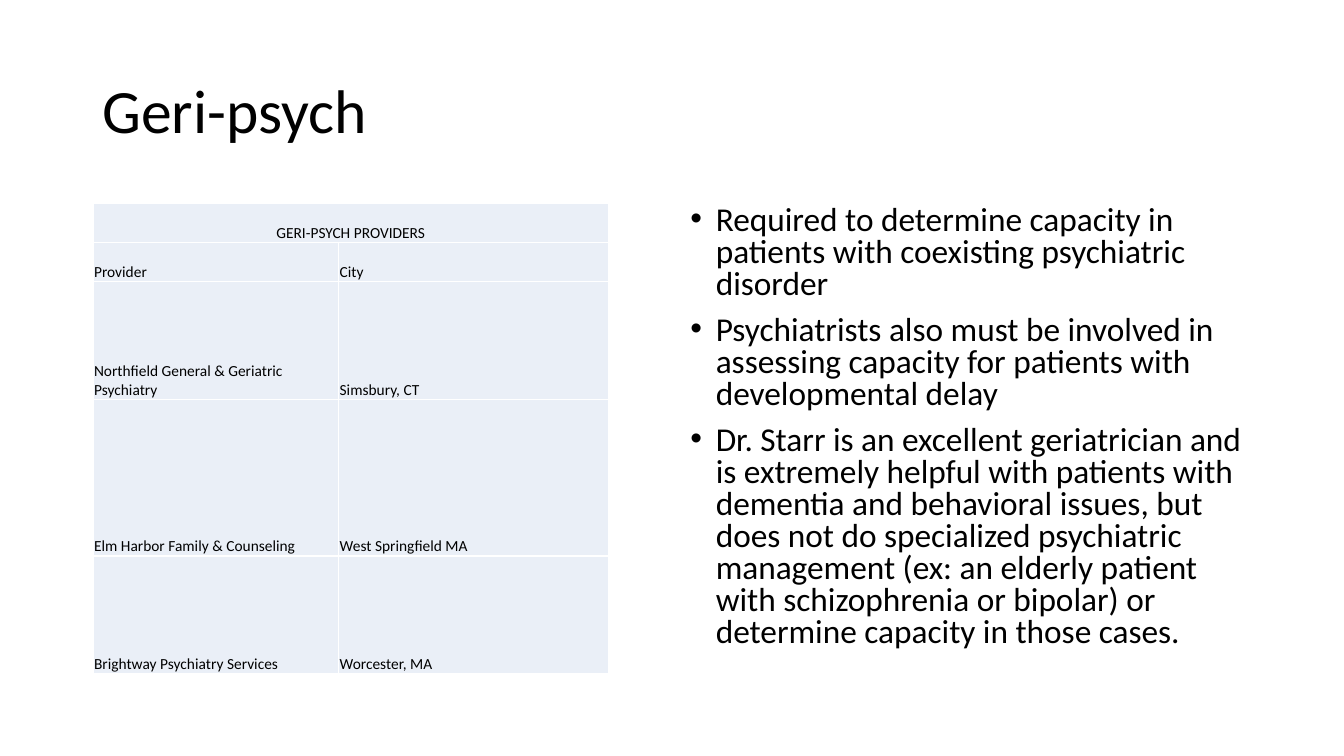
from lxml.etree import SubElement as Sub, Element
from pptx import Presentation
from pptx.dml.color import RGBColor
from pptx.enum.text import MSO_ANCHOR as Anchor, PP_ALIGN as Align
from pptx.oxml.ns import qn
from pptx.util import Cm, Pt

BLACK = RGBColor(0, 0, 0)
WHITE = RGBColor(0xFF, 0xFF, 0xFF)
PALE = RGBColor(0xEA, 0xEF, 0xF7)


def style(para, size):
    for run in para.runs:
        run.font.name = "Calibri"
        run.font.size = Pt(size)
        run.font.color.rgb = BLACK


def edge(cell):
    props = cell._tc.get_or_add_tcPr()
    for i, side in enumerate(("lnL", "lnR", "lnT", "lnB")):
        line = Element(qn("a:" + side), w=str(Pt(1)))
        fill = Sub(line, qn("a:solidFill"))
        Sub(fill, qn("a:srgbClr"), val=str(WHITE))
        props.insert(i, line)


deck = Presentation()
deck.slide_width = Cm(33.87)
deck.slide_height = Cm(19.05)
slide = deck.slides.add_slide(deck.slide_layouts[6])

title = slide.shapes.add_textbox(Cm(2.33), Cm(1.01), Cm(29.21), Cm(3.68)).text_frame
title.word_wrap = True
title.vertical_anchor = Anchor.MIDDLE
title.text = "Geri-psych"
title.paragraphs[0].line_spacing = 0.9
style(title.paragraphs[0], 44)

rows = [
    ("GERI-PSYCH PROVIDERS", ""),
    ("Provider", "City"),
    ("Northfield General & Geriatric Psychiatry", "Simsbury, CT"),
    ("Elm Harbor Family & Counseling", "West Springfield MA"),
    ("Brightway Psychiatry Services", "Worcester, MA"),
]
highs = [0.99, 0.99, 2.96, 3.95, 2.96]
wides = [6.19, 6.79]
grid = slide.shapes.add_table(
    len(rows), 2, Cm(2.35), Cm(5.12), Cm(sum(wides)), Cm(sum(highs))).table
for col, wide in zip(grid.columns, wides):
    col.width = Cm(wide)
for r, (row, high) in enumerate(zip(rows, highs)):
    grid.rows[r].height = Cm(high)
    for c, text in enumerate(row):
        cell = grid.cell(r, c)
        cell.margin_left = cell.margin_right = cell.margin_top = Cm(0.02)
        cell.margin_bottom = 0
        cell.vertical_anchor = Anchor.BOTTOM
        cell.fill.solid()
        cell.fill.fore_color.rgb = PALE
        edge(cell)
        cell.text_frame.text = text
        style(cell.text_frame.paragraphs[0], 11)
grid.cell(0, 0).merge(grid.cell(0, 1))
grid.cell(0, 0).text_frame.paragraphs[0].alignment = Align.CENTER

points = [
    "Required to determine capacity in patients with coexisting psychiatric disorder",
    "Psychiatrists also must be involved in assessing capacity for patients with "
    "developmental delay",
    "Dr. Starr is an excellent geriatrician and is extremely helpful with patients with "
    "dementia and behavioral issues, but does not do specialized psychiatric management "
    "(ex: an elderly patient with schizophrenia or bipolar) or determine capacity in "
    "those cases.",
]
body = slide.shapes.add_textbox(Cm(17.15), Cm(5.07), Cm(14.4), Cm(12.09)).text_frame
body.word_wrap = True
for i, text in enumerate(points):
    para = body.add_paragraph() if i else body.paragraphs[0]
    para.text = text
    props = para._p.get_or_add_pPr()
    props.set("marL", str(Cm(0.64)))
    props.set("indent", str(-Cm(0.64)))
    Sub(props, qn("a:buFont"), typeface="Arial")
    Sub(props, qn("a:buChar"), char="•")
    para.line_spacing = 0.8
    if i:
        para.space_before = Pt(10)
    style(para, 23.8)

deck.save("out.pptx")
